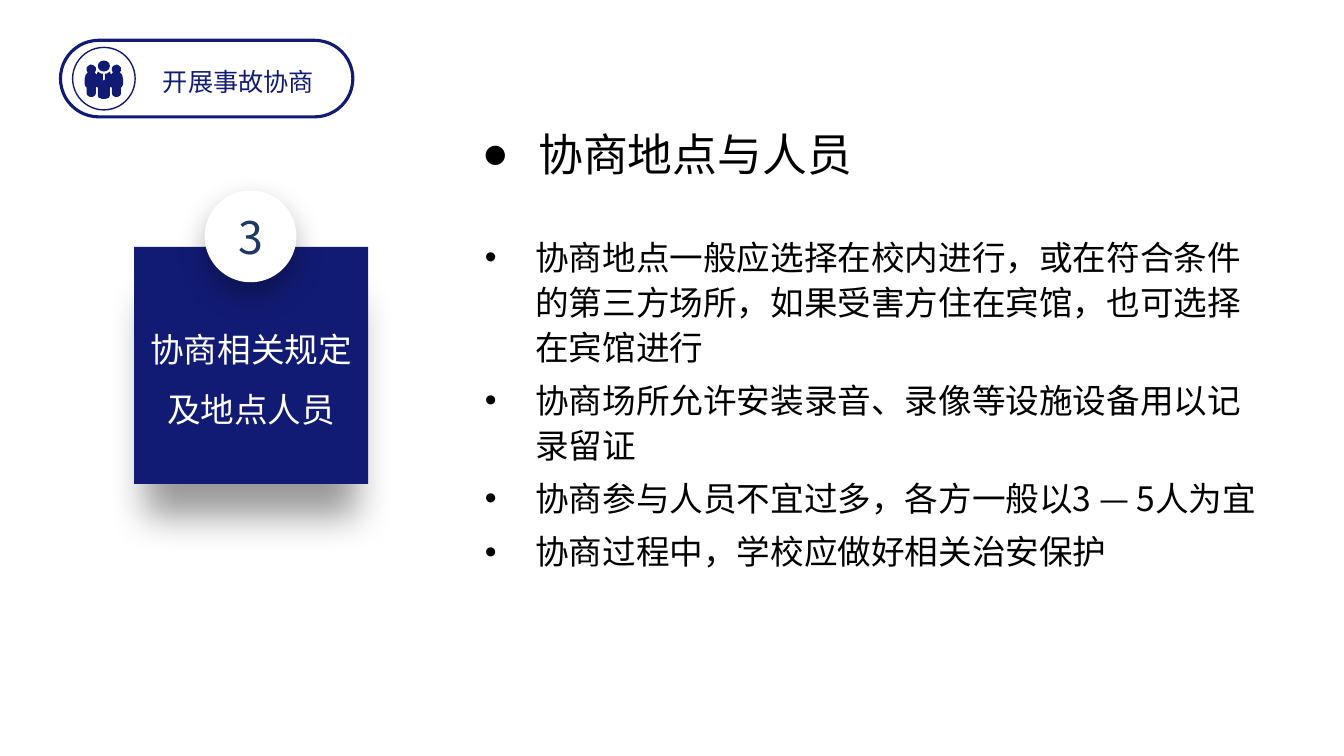
from lxml.etree import SubElement as Sub
from pptx import Presentation
from pptx.dml.color import RGBColor as Rgb
from pptx.enum.shapes import MSO_SHAPE as Kind
from pptx.enum.text import MSO_ANCHOR as Anchor, MSO_AUTO_SIZE as Auto, PP_ALIGN as Align
from pptx.oxml.ns import qn
from pptx.util import Pt

PX = 9144  # 100 px to the inch
FONT = "Noto Sans CJK SC"
HUE = {"navy": "121B74", "slate": "203864", "black": "000000", "white": "FFFFFF"}

RULES = [
    "协商地点一般应选择在校内进行，或在符合条件的第三方场所，如果受害方住在宾馆，也可选择在宾馆进行",
    "协商场所允许安装录音、录像等设施设备用以记录留证",
    "协商参与人员不宜过多，各方一般以3 — 5人为宜",
    "协商过程中，学校应做好相关治安保护",
]
AXIS = 103  # centre line of the people icon
HALF = [(103, 80), (102, 79), (102, 73), (100, 73), (97, 71), (96, 74),
        (94, 72), (95, 70), (95, 67), (93, 65), (90, 64), (88, 65),
        (86, 67), (86, 70), (87, 72), (85, 74), (84, 78), (84, 84),
        (85, 86), (86, 87), (86, 93), (87, 95), (89, 96), (92, 96),
        (94, 95), (95, 93), (95, 87), (96, 86), (97, 87), (97, 95),
        (98, 97), (101, 98)]


def emu(*box):
    return [n * PX for n in box]


def color(name):
    return Rgb.from_string(HUE[name])


def paint(shape, fill=None, line=None, width=1):
    shape.shadow.inherit = False
    if fill:
        shape.fill.solid()
        shape.fill.fore_color.rgb = color(fill)
    else:
        shape.fill.background()
    if line:
        shape.line.color.rgb = color(line)
        shape.line.width = Pt(width)
    else:
        shape.line.fill.background()


def block(shapes, kind, box, **look):
    shape = shapes.add_shape(kind, *emu(*box))
    paint(shape, **look)
    return shape


def shade(shape, alpha, blur, dist, scale=100):
    """Cast a soft black shadow straight down; blur and dist are in points."""
    fx = shape._element.spPr.find(qn("a:effectLst"))
    cast = Sub(fx, qn("a:outerShdw"), blurRad=str(Pt(blur)), dist=str(Pt(dist)),
               dir="5400000", sx=str(scale * 1000), sy=str(scale * 1000),
               algn="ctr", rotWithShape="0")
    tint = Sub(cast, qn("a:srgbClr"), val=HUE["black"])
    Sub(tint, qn("a:alpha"), val=str(alpha * 1000))


def mark(para, char, left, hang):
    """Give a paragraph a bullet with a hanging indent."""
    props = para._p.get_or_add_pPr()
    props.set("marL", str(left * PX))
    props.set("indent", str(-hang * PX))
    Sub(props, qn("a:buFont"), typeface="Arial")
    Sub(props, qn("a:buChar"), char=char)


def write(frame, lines, size, hue, align=Align.LEFT, lead=None, before=None, bullet=None):
    for i, line in enumerate(lines):
        para = frame.add_paragraph() if i else frame.paragraphs[0]
        para.alignment = align
        if lead:
            para.line_spacing = lead
        if before:
            para.space_before = Pt(before)
        if bullet:
            mark(para, *bullet)
        run = para.add_run()
        run.text = line
        run.font.size = Pt(size)
        run.font.name = FONT
        run.font.color.rgb = color(hue)
        Sub(run._r.get_or_add_rPr(), qn("a:ea"), typeface=FONT)


def label(shapes, box, lines, size, hue, wrap=True, inset=(10, 5), **form):
    frame = shapes.add_textbox(*emu(*box)).text_frame
    frame.word_wrap = wrap
    frame.auto_size = Auto.SHAPE_TO_FIT_TEXT
    frame.margin_left = frame.margin_right = inset[0] * PX
    frame.margin_top = frame.margin_bottom = inset[1] * PX
    write(frame, lines, size, hue, **form)


def people(shapes):
    block(shapes, Kind.OVAL, (97, 60, 12, 11), fill="navy")
    ring = HALF + [(2 * AXIS - x, y) for x, y in reversed(HALF[1:])]
    pen = shapes.build_freeform(*ring[0], scale=PX)
    pen.add_line_segments(ring[1:], close=True)
    paint(pen.convert_to_shape(), fill="navy")


def card(shapes):
    square = block(shapes, Kind.ROUNDED_RECTANGLE, (133, 245, 232, 235), fill="navy")
    square.adjustments[0] = 0
    shade(square, 40, 27, 31, scale=90)
    badge = block(shapes, Kind.OVAL, (203, 189, 91, 91), fill="white")
    shade(badge, 30, 21, 9)
    frame = badge.text_frame
    frame.vertical_anchor = Anchor.MIDDLE
    frame.margin_left = frame.margin_right = 13 * PX
    frame.margin_top = frame.margin_bottom = 7 * PX
    write(frame, ["3"], 32, "slate", align=Align.CENTER)
    label(shapes, (135, 306, 228, 121), ["协商相关规定及地点人员"], 24, "white",
          inset=(0, 0), align=Align.CENTER, lead=1.5)


def header(shapes):
    pill = block(shapes, Kind.ROUNDED_RECTANGLE, (60, 40, 290, 76), line="navy", width=2.25)
    pill.adjustments[0] = 0.5
    block(shapes, Kind.OVAL, (72, 47, 62, 62), fill="white", line="navy")
    people(shapes)
    label(shapes, (136, 61, 201, 40), ["开展事故协商"], 18, "navy", align=Align.CENTER)


def main():
    deck = Presentation()
    deck.slide_width, deck.slide_height = emu(1333, 750)
    shapes = deck.slides.add_slide(deck.slide_layouts[6]).shapes
    label(shapes, (468, 132, 402, 52), ["协商地点与人员"], 32, "black", wrap=False,
          lead=Pt(30), before=6, bullet=("●", 56, 67))
    label(shapes, (471, 226, 802, 346), RULES, 24, "black",
          lead=Pt(32), before=6, bullet=("•", 50, 50))
    card(shapes.add_group_shape().shapes)
    header(shapes.add_group_shape().shapes)
    deck.save("out.pptx")


if __name__ == "__main__":
    main()
